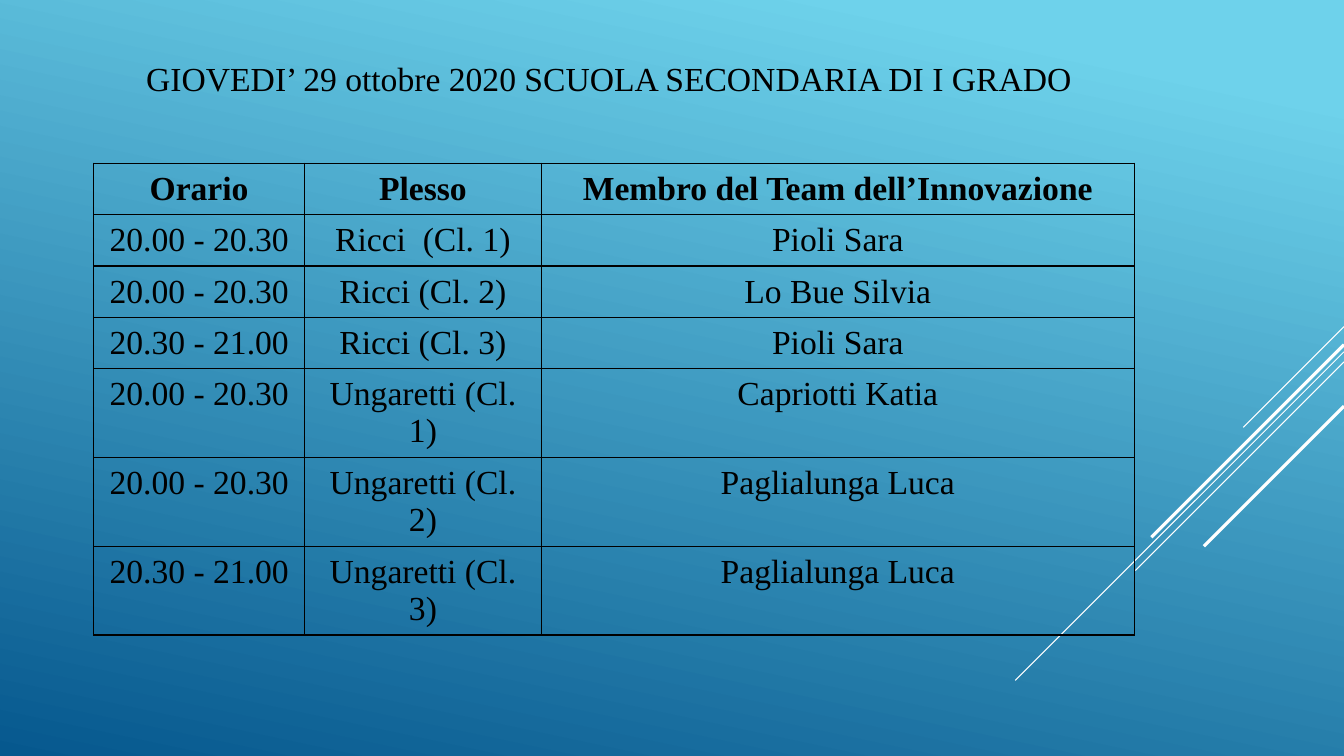
from lxml.etree import SubElement as Sub
from pptx import Presentation
from pptx.dml.color import RGBColor as RGB
from pptx.enum.shapes import MSO_CONNECTOR as Conn
from pptx.enum.text import MSO_ANCHOR as Anchor, PP_ALIGN as Align
from pptx.oxml.ns import qn
from pptx.util import Inches, Pt

BLACK = RGB(0, 0, 0)
WHITE = RGB(255, 255, 255)
SKY = RGB(0x6E, 0xD2, 0xEB)
DEEP = RGB(0x06, 0x58, 0x8E)
FONT = "Times New Roman"
WIDE = 13.33

TITLE = "GIOVEDI’ 29 ottobre 2020 SCUOLA SECONDARIA DI I GRADO"
COLS = [2.09, 2.35, 5.88]
ROWS = [
    ("Orario", "Plesso", "Membro del Team dell’Innovazione"),
    ("20.00 - 20.30", "Ricci  (Cl. 1)", "Pioli Sara"),
    ("20.00 - 20.30", "Ricci (Cl. 2)", "Lo Bue Silvia"),
    ("20.30 - 21.00", "Ricci (Cl. 3)", "Pioli Sara"),
    ("20.00 - 20.30", "Ungaretti (Cl. 1)", "Capriotti Katia"),
    ("20.00 - 20.30", "Ungaretti (Cl. 2)", "Paglialunga Luca"),
    ("20.30 - 21.00", "Ungaretti (Cl. 3)", "Paglialunga Luca"),
]
# Diagonal stripes: start height on the right edge, run, line width
STRIPES = [(3.24, 1, 0.75), (3.49, 3.26, 0.75), (3.59, 2.07, 0.75),
           (3.42, 1.91, 2.25), (4.03, 1.39, 2.25)]


def paint_back(slide):
    fill = slide.background.fill
    fill.gradient()
    fill.gradient_angle = 360 - 102
    for stop, (pos, color) in zip(fill.gradient_stops, [(0.1, SKY), (1, DEEP)]):
        stop.position = pos
        stop.color.rgb = color


def add_stripe(slide, top, run, width):
    line = slide.shapes.add_connector(
        Conn.STRAIGHT, Inches(WIDE), Inches(top),
        Inches(WIDE - run), Inches(top + run))
    line.line.color.rgb = WHITE
    line.line.width = Pt(width)
    Sub(line._element.spPr, qn("a:effectLst"))


def style_text(para, align, bold=False):
    para.alignment = align
    for run in para.runs:
        font = run.font
        font.name, font.size, font.bold = FONT, Pt(24), bold
        font.color.rgb = BLACK


def set_title(slide):
    title = slide.shapes.title
    title.left, title.top = Inches(1.35), Inches(0.52)
    title.width, title.height = Inches(9.48), Inches(0.5)
    frame = title.text_frame
    frame.text = TITLE
    frame.word_wrap = False
    frame.vertical_anchor = Anchor.MIDDLE
    style_text(frame.paragraphs[0], Align.LEFT)


def add_border(cell):
    props = cell._tc.get_or_add_tcPr()
    for side in ("lnL", "lnR", "lnT", "lnB"):
        edge = Sub(props, qn(f"a:{side}"), w=str(Pt(1)))
        solid = Sub(edge, qn("a:solidFill"))
        Sub(solid, qn("a:srgbClr"), val=str(BLACK))


def fill_cell(cell, text, bold):
    cell.text = text
    cell.margin_left = cell.margin_right = Inches(0.07)
    cell.margin_top = cell.margin_bottom = Inches(0.07)
    style_text(cell.text_frame.paragraphs[0], Align.CENTER, bold)
    add_border(cell)
    cell.fill.background()


def add_grid(slide):
    # Long school names wrap onto a second line
    highs = [0.88 if "Ungaretti" in row[1] else 0.51 for row in ROWS]
    table = slide.shapes.add_table(
        len(ROWS), len(COLS), Inches(0.93), Inches(1.62),
        Inches(sum(COLS)), Inches(sum(highs))).table
    table.horz_banding = False
    for col, width in zip(table.columns, COLS):
        col.width = Inches(width)
    for r, (row, high) in enumerate(zip(ROWS, highs)):
        table.rows[r].height = Inches(high)
        for c, text in enumerate(row):
            fill_cell(table.cell(r, c), text, r == 0)


def main():
    deck = Presentation()
    deck.slide_width, deck.slide_height = Inches(WIDE), Inches(7.5)
    slide = deck.slides.add_slide(deck.slide_layouts[5])
    paint_back(slide)
    for stripe in STRIPES:
        add_stripe(slide, *stripe)
    add_grid(slide)
    set_title(slide)
    deck.save("out.pptx")


if __name__ == "__main__":
    main()
